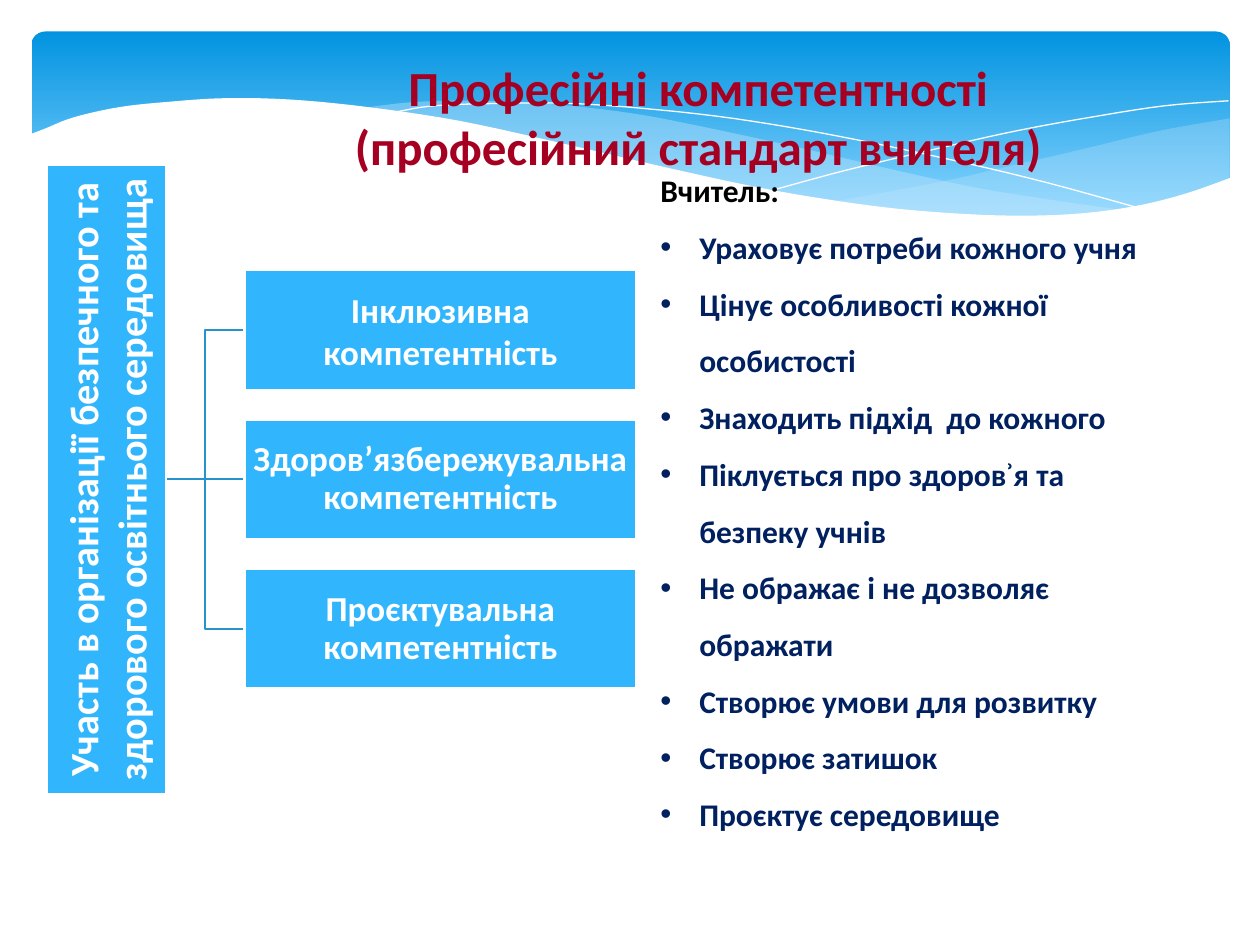
from lxml import etree
from pptx import Presentation
from pptx.dml.color import RGBColor
from pptx.enum.shapes import MSO_CONNECTOR, MSO_SHAPE
from pptx.enum.text import MSO_ANCHOR, MSO_AUTO_SIZE, PP_ALIGN
from pptx.oxml.ns import qn
from pptx.util import Inches, Pt

CENTER, LEFT = PP_ALIGN.CENTER, PP_ALIGN.LEFT
TOP, MIDDLE = MSO_ANCHOR.TOP, MSO_ANCHOR.MIDDLE
NO_AUTOSIZE = MSO_AUTO_SIZE.NONE
RECTANGLE, ROUNDED = MSO_SHAPE.RECTANGLE, MSO_SHAPE.ROUNDED_RECTANGLE
STRAIGHT, ELBOW = MSO_CONNECTOR.STRAIGHT, MSO_CONNECTOR.ELBOW

FONT = "Calibri"
WHITE = RGBColor(0xFF, 0xFF, 0xFF)
BLACK = RGBColor(0x00, 0x00, 0x00)
CRIMSON = RGBColor(0xA5, 0x00, 0x21)
NAVY = RGBColor(0x00, 0x20, 0x60)
SKY = RGBColor(0x31, 0xB6, 0xFD)
LINK_BLUE = RGBColor(0x27, 0x92, 0xCB)
BANNER_TOP = RGBColor(0x02, 0x93, 0xE0)
BANNER_BOTTOM = RGBColor(0x83, 0xD3, 0xFE)
PALE_BLUE = RGBColor(0xC6, 0xE7, 0xFC)

# Wave edges, in inches from the banner's top left corner
RIGHT_WAVE = [
    [(6.36, 1.35), (6.81, 1.27), (7.28, 1.18), (7.8, 1.06), (8.36, 0.93),
     (8.81, 0.82), (9.1, 0.76), (9.51, 0.69)],
    [(9.51, 1.16), (9.24, 1.27), (8.88, 1.37), (8.47, 1.44), (7.99, 1.47),
     (7.44, 1.46), (6.94, 1.42), (6.36, 1.35)],
]
LONG_WAVE = [
    [(2.61, 0.61), (3.03, 0.56), (3.55, 0.55), (4.17, 0.58), (4.77, 0.65),
     (5.3, 0.75), (6.04, 0.91), (6.81, 1.09), (7.5, 1.24), (8.12, 1.34), (8.68, 1.42)],
    [(8.68, 1.42), (8.32, 1.46), (7.82, 1.48), (7.23, 1.45), (6.55, 1.38),
     (5.76, 1.25), (5.05, 1.1), (4.24, 0.91), (3.58, 0.76), (2.98, 0.65), (2.61, 0.61)],
]
FALLING_LINE = [[(2.84, 0.65), (3.19, 0.59), (3.76, 0.57), (4.25, 0.57), (4.85, 0.61),
                 (5.57, 0.69), (6.4, 0.83), (7.35, 1.03), (8.06, 1.2), (8.82, 1.41)]]
RISING_LINE = [[(5.88, 1.26), (6.47, 1.1), (7.23, 0.92), (7.81, 0.79), (8.41, 0.68),
                (8.99, 0.59), (9.5, 0.55)]]
WHITE_WAVE = [
    [(-0.02, 0.82), (0.11, 0.77), (0.34, 0.68), (0.7, 0.6), (1.07, 0.56), (1.52, 0.53),
     (2.05, 0.54), (2.67, 0.6), (3.4, 0.71), (4.22, 0.89), (5.04, 1.08), (5.78, 1.24),
     (6.43, 1.35), (7.01, 1.42), (7.68, 1.46), (8.25, 1.45), (8.74, 1.39),
     (9.15, 1.29), (9.52, 1.16)],
    [(9.52, 1.99), (-0.02, 1.99)],
]

TITLE = ["Професійні компетентності", "(професійний стандарт вчителя)"]
ROOT = "Участь в організації безпечного та здорового освітнього середовища"
COMPETENCES = ["Інклюзивна компетентність", "Здоров’язбережувальна компетентність",
               "Проєктувальна компетентність"]
LIST_HEADING = "Вчитель:"
TEACHER_ACTIONS = [
    "Ураховує потреби кожного учня",
    "Цінує особливості кожної особистості",
    "Знаходить підхід  до кожного",
    "Піклується про здоровʾя та безпеку учнів",
    "Не ображає і не дозволяє ображати",
    "Створює умови для розвитку",
    "Створює затишок",
    "Проєктує середовище",
]


def smooth(points, steps=5):
    """Catmull-Rom curve through the points."""
    padded = [points[0], *points, points[-1]]
    curve = [points[0]]
    for a, b, c, d in zip(padded, padded[1:], padded[2:], padded[3:]):
        for step in range(1, steps + 1):
            t = step / steps
            curve.append(tuple(
                q + t * (r - p + t * (2 * p - 5 * q + 4 * r - s + t * (3 * (q - r) + s - p))) / 2
                for p, q, r, s in zip(a, b, c, d)))
    return curve


def format_paragraph(paragraph, size, color, align=CENTER, spacing=1.0):
    paragraph.alignment = align
    paragraph.line_spacing = spacing
    paragraph.space_before = paragraph.space_after = Pt(0)
    for run in paragraph.runs:
        run.font.name, run.font.size, run.font.bold = FONT, Pt(size), True
        run.font.color.rgb = color


def place_placeholder(placeholder, box):
    """Moves a placeholder to the box, in front of the banner."""
    placeholder.left, placeholder.top, placeholder.width, placeholder.height = map(Inches, box)
    placeholder.element.getparent().append(placeholder.element)
    text_frame = placeholder.text_frame
    text_frame.auto_size, text_frame.vertical_anchor = NO_AUTOSIZE, TOP
    text_frame.word_wrap = True
    return text_frame


def add_wave(slide, box, edges, fill=None, opacity=100):
    points = [(Inches(box[0] + x), Inches(box[1] + y)) for edge in edges for x, y in smooth(edge)]
    builder = slide.shapes.build_freeform(*points[0])
    builder.add_line_segments(points[1:], close=fill is not None)
    wave = builder.convert_to_shape()
    wave.shadow.inherit = False
    if fill is None:
        wave.fill.background()
        wave.line.color.rgb, wave.line.width = WHITE, Pt(0)
        return
    wave.line.fill.background()
    wave.fill.solid()
    wave.fill.fore_color.rgb = fill
    if opacity < 100:
        color = wave.element.spPr.find(qn("a:solidFill"))[0]
        etree.SubElement(color, qn("a:alpha")).set("val", str(opacity * 1000))


def add_banner(slide, box):
    banner = slide.shapes.add_shape(ROUNDED, *map(Inches, box))
    banner.adjustments[0] = 0.07
    banner.shadow.inherit = False
    banner.line.fill.background()
    banner.fill.gradient()
    banner.fill.gradient_angle = 270
    for stop, color, position in zip(banner.fill.gradient_stops,
                                     (BANNER_TOP, BANNER_BOTTOM), (0, 0.9)):
        stop.color.rgb, stop.position = color, position
    add_wave(slide, box, RIGHT_WAVE, PALE_BLUE, 29)
    add_wave(slide, box, LONG_WAVE, PALE_BLUE, 40)
    add_wave(slide, box, FALLING_LINE)
    add_wave(slide, box, RISING_LINE)
    add_wave(slide, box, WHITE_WAVE, WHITE)


def add_title(slide, box):
    text_frame = place_placeholder(slide.shapes.title, box)
    text_frame.text = "\n".join(TITLE)
    for paragraph in text_frame.paragraphs:
        format_paragraph(paragraph, 28, CRIMSON)


def add_node(slide, box, text, size, spacing=1.0, inset=0.01):
    node = slide.shapes.add_shape(RECTANGLE, *map(Inches, box))
    node.shadow.inherit = False
    node.fill.solid()
    node.fill.fore_color.rgb = SKY
    node.line.color.rgb, node.line.width = WHITE, Pt(1.25)
    text_frame = node.text_frame
    text_frame.word_wrap, text_frame.vertical_anchor = True, MIDDLE
    text_frame.margin_left = text_frame.margin_right = Inches(inset)
    text_frame.margin_top = text_frame.margin_bottom = Inches(inset)
    text_frame.text = text
    format_paragraph(text_frame.paragraphs[0], size, WHITE, spacing=spacing)
    return node


def add_hierarchy(slide, box):
    """Upright root bar on the left, linked to a column of competences."""
    left, top, width, height = box
    thickness, gap, pitch = 0.95, 0.62, 1.185
    middle = top + height / 2
    child_left = left + thickness + gap

    # Links lie behind the boxes
    for row in (-1, 0, 1):
        link = slide.shapes.add_connector(
            ELBOW if row else STRAIGHT, Inches(left + thickness), Inches(middle),
            Inches(child_left), Inches(middle + row * pitch))
        link.line.color.rgb, link.line.width = LINK_BLUE, Pt(1.25)
        etree.SubElement(link.element.spPr, qn("a:effectLst"))

    # The root bar is laid flat around its centre, then turned
    root_box = (left + (thickness - height) / 2, middle - thickness / 2, height, thickness)
    add_node(slide, root_box, ROOT, 23, inset=0.02).rotation = 270
    for row, text in enumerate(COMPETENCES):
        child_top = middle + (row - 1) * pitch - thickness / 2
        add_node(slide, (child_left, child_top, left + width - child_left, thickness),
                 text, 20, spacing=0.9 if row else 1.0)


def add_teacher_list(slide, box):
    text_frame = place_placeholder(slide.placeholders[1], box)
    text_frame.text = "\n".join([LIST_HEADING, *TEACHER_ACTIONS])
    for index, paragraph in enumerate(text_frame.paragraphs):
        format_paragraph(paragraph, 18, NAVY if index else BLACK, LEFT, 1.5 if index else 1.0)
        properties = paragraph._p.get_or_add_pPr()
        indent = Inches(0.31) if index else 0
        properties.set("marL", str(indent))
        properties.set("indent", str(-indent))
        if index:
            etree.SubElement(properties, qn("a:buFont")).set("typeface", "Arial")
            etree.SubElement(properties, qn("a:buChar")).set("char", "•")
        else:
            etree.SubElement(properties, qn("a:buNone"))


def main():
    presentation = Presentation()
    presentation.slide_width, presentation.slide_height = Inches(10), Inches(7.5)
    slide = presentation.slides.add_slide(presentation.slide_layouts[1])
    add_banner(slide, (0.25, 0.25, 9.51, 1.56))
    add_title(slide, (1.94, 0.41, 7.2, 1.04))
    add_hierarchy(slide, (0.37, 1.31, 4.68, 4.99))
    add_teacher_list(slide, (5.14, 1.31, 4.19, 5.5))
    presentation.save("out.pptx")


if __name__ == "__main__":
    main()
